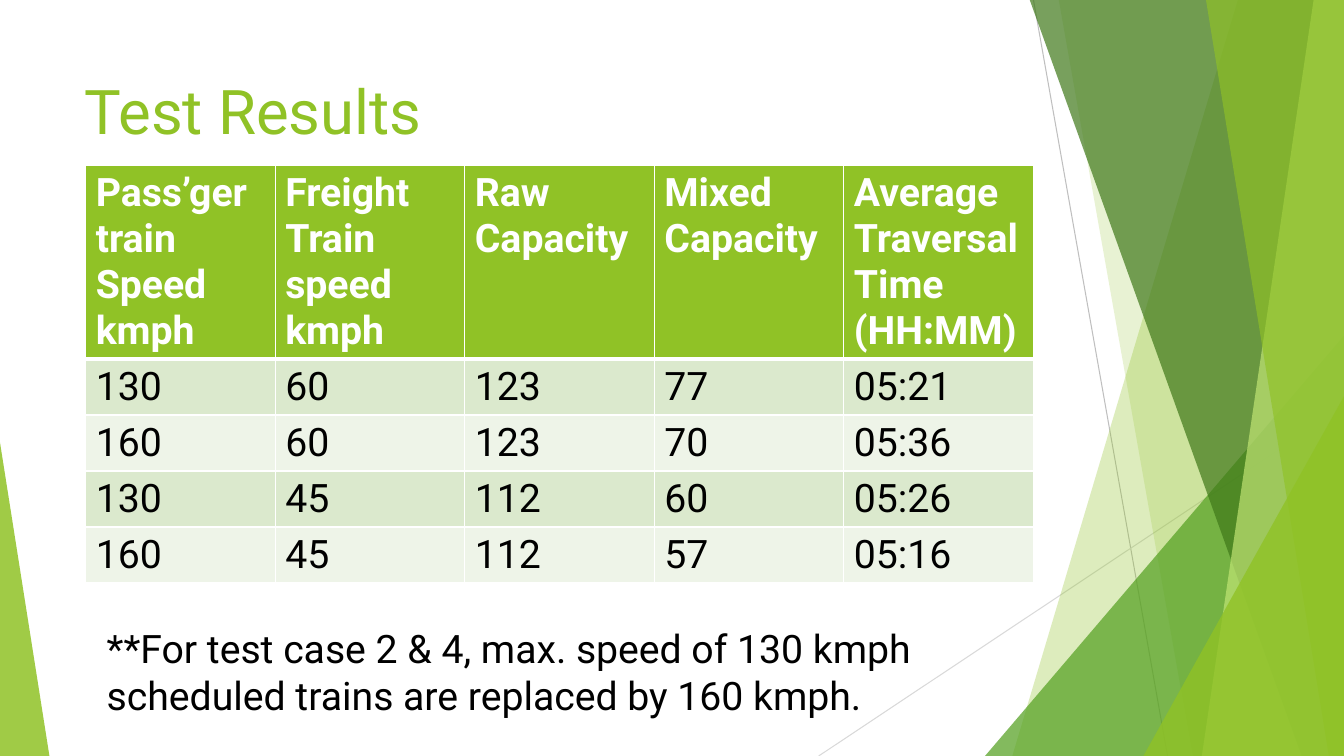
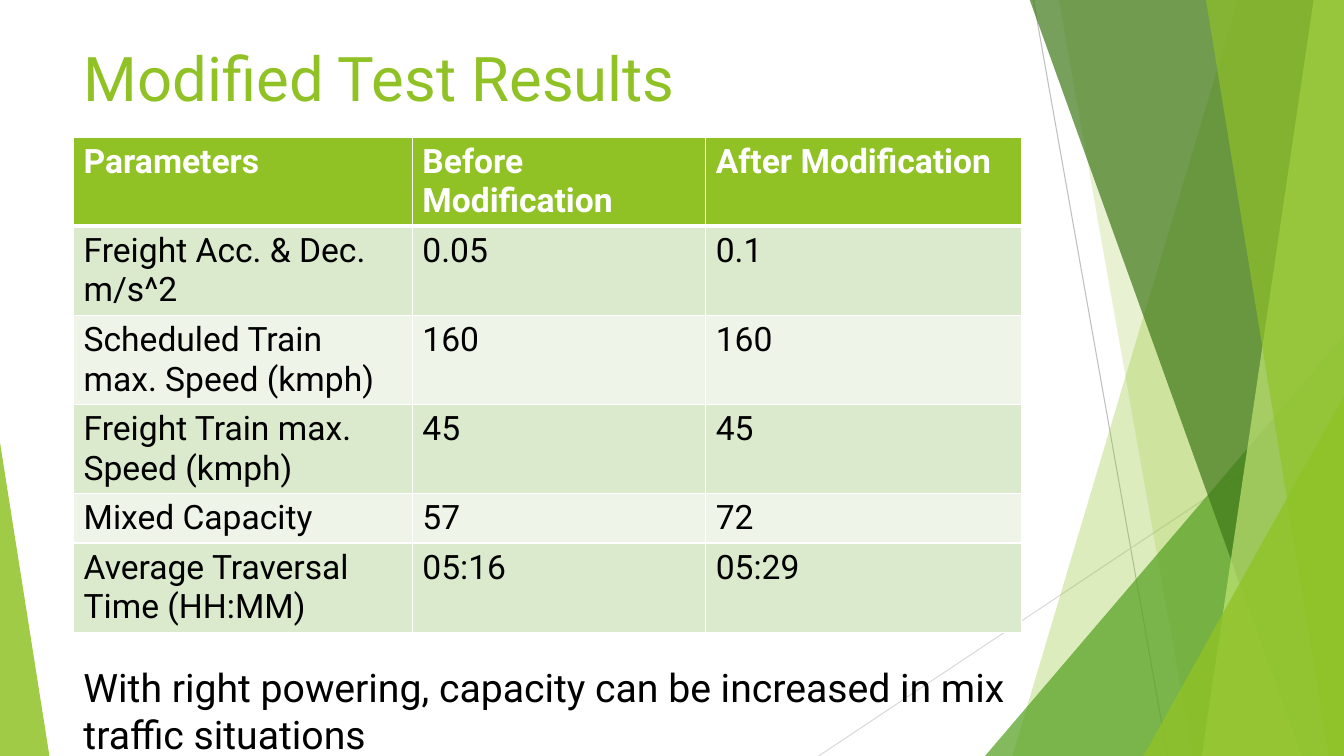
from dataclasses import dataclass

from lxml import etree
from pptx import Presentation
from pptx.dml.color import RGBColor
from pptx.enum.shapes import MSO_CONNECTOR, MSO_SHAPE
from pptx.enum.text import MSO_ANCHOR, MSO_AUTO_SIZE, PP_ALIGN
from pptx.oxml.ns import qn
from pptx.util import Inches, Pt

STRAIGHT = MSO_CONNECTOR.STRAIGHT
TRIANGLE = MSO_SHAPE.ISOSCELES_TRIANGLE
TOP = MSO_ANCHOR.TOP
LEFT = PP_ALIGN.LEFT
NO_AUTOFIT = MSO_AUTO_SIZE.NONE
GROW = MSO_AUTO_SIZE.SHAPE_TO_FIT_TEXT
TITLE_ONLY = 5
WIDTH, HEIGHT = 13.33, 7.5
BLEED = -0.01


@dataclass(frozen=True)
class Theme:
    font: str = "Roboto"
    lime: str = "90C226"
    green: str = "54A021"
    forest: str = "3F7819"
    pale_lime: str = "C0E474"
    white: str = "FFFFFF"
    black: str = "000000"
    bands: tuple = ("DBE9CD", "EEF4E8")
    dark_rule: str = "BFBFBF"
    light_rule: str = "D9D9D9"
    title_size: int = 44
    note_size: int = 28
    wide_table_size: int = 28
    tall_table_size: int = 24
    rule_width: float = 0.75
    border: int = 1
    header_border: int = 3


class Deck:
    """Hold the theme and the current slide, and add styled elements to it."""

    def __init__(self, theme):
        self.theme = theme
        self.presentation = Presentation()
        self.presentation.slide_width = Inches(WIDTH)
        self.presentation.slide_height = Inches(HEIGHT)
        self.layout = self.presentation.slide_layouts[TITLE_ONLY]
        for placeholder in list(self.layout.placeholders):
            if placeholder.placeholder_format.idx:
                self.layout.shapes.element.remove(placeholder.element)
        self.slide = None
        self.backdrop = None

    def add_slide(self, title, left, top):
        self.slide = self.presentation.slides.add_slide(self.layout)
        if self.backdrop is None:
            self.draw_backdrop()
        heading = self.slide.shapes.title
        heading.left, heading.top = Inches(left), Inches(top)
        heading.width, heading.height = Inches(9.4), Inches(1.44)
        heading.text_frame.auto_size = NO_AUTOFIT
        heading.text_frame.vertical_anchor = TOP
        self.add_text(heading.text_frame, title, self.theme.title_size, self.theme.lime)

    def add_text(self, frame, text, size, color, bold=False):
        frame.word_wrap = True
        paragraph = frame.paragraphs[0]
        paragraph.alignment = LEFT
        run = paragraph.add_run()
        run.text = text
        run.font.name = self.theme.font
        run.font.size = Pt(size)
        run.font.bold = bold
        run.font.color.rgb = RGBColor.from_string(color)

    def draw_backdrop(self):
        theme = self.theme
        self.backdrop = self.slide.shapes.add_group_shape()
        self.rule((10.25, 0), (11.58, HEIGHT), theme.dark_rule)
        self.rule((WIDTH, 4.03), (8.12, HEIGHT), theme.light_rule)
        self.ribbon(12.28, 10.04, theme.lime, 30)
        self.ribbon(10.5, 11.83, theme.lime, 20)
        self.corner(9.77, 3.33, 3.56, 1, theme.green, 72)
        self.ribbon(10.21, 12.91, theme.forest, 70)
        self.ribbon(13.03, 11.92, theme.pale_lime, 70)
        self.ribbon(11.96, 13.18, theme.lime, 65)
        self.corner(11.34, 3.93, 1.99, 1, theme.lime, 80)
        self.corner(0, 4.39, 0.49, 0, theme.lime, 85)
        self.layout.shapes.element.append(self.backdrop.element)

    def rule(self, start, end, color):
        line = self.backdrop.shapes.add_connector(
            STRAIGHT, *(Inches(value) for value in start + end))
        line.line.color.rgb = RGBColor.from_string(color)
        line.line.width = Pt(self.theme.rule_width)
        etree.SubElement(line.element.spPr, qn("a:effectLst"))

    def ribbon(self, top_left, bottom_left, color, opacity):
        outline = self.backdrop.shapes.build_freeform(Inches(top_left), Inches(BLEED))
        corners = [(WIDTH, BLEED), (WIDTH, HEIGHT), (bottom_left, HEIGHT)]
        outline.add_line_segments([(Inches(x), Inches(y)) for x, y in corners])
        self.tint(outline.convert_to_shape(), color, opacity)

    def corner(self, left, top, width, apex, color, opacity):
        wedge = self.backdrop.shapes.add_shape(
            TRIANGLE, Inches(left), Inches(top), Inches(width), Inches(HEIGHT - top))
        wedge.adjustments[0] = apex
        self.tint(wedge, color, opacity)

    def tint(self, shape, color, opacity):
        shape.shadow.inherit = False
        shape.line.fill.background()
        shape.fill.solid()
        shape.fill.fore_color.rgb = RGBColor.from_string(color)
        tone = shape.element.spPr.find(qn("a:solidFill")).find(qn("a:srgbClr"))
        etree.SubElement(tone, qn("a:alpha"), val=str(opacity * 1000))

    def add_table(self, rows, left, top, widths, heights, size):
        theme = self.theme
        table = self.slide.shapes.add_table(
            len(rows), len(widths), Inches(left), Inches(top),
            Inches(sum(widths)), Inches(sum(heights))).table
        for column, width in zip(table.columns, widths):
            column.width = Inches(width)
        for number, (row, height) in enumerate(zip(rows, heights)):
            table.rows[number].height = Inches(height)
            header = number == 0
            fill = theme.lime if header else theme.bands[(number - 1) % 2]
            color = theme.white if header else theme.black
            for cell, text in zip(table.rows[number].cells, row):
                self.add_text(cell.text_frame, text, size, color, header)
                self.add_borders(cell, number)
                cell.fill.solid()
                cell.fill.fore_color.rgb = RGBColor.from_string(fill)

    def add_borders(self, cell, number):
        thin, thick = self.theme.border, self.theme.header_border
        edges = {"L": thin, "R": thin,
                 "T": thick if number == 1 else thin,
                 "B": thick if number == 0 else thin}
        properties = cell._tc.get_or_add_tcPr()
        for edge, width in edges.items():
            line = etree.SubElement(properties, qn("a:ln" + edge), w=str(Pt(width)))
            solid = etree.SubElement(line, qn("a:solidFill"))
            etree.SubElement(solid, qn("a:srgbClr"), val=self.theme.white)

    def add_note(self, text, left, top, width):
        note = self.slide.shapes.add_textbox(
            Inches(left), Inches(top), Inches(width), Inches(1.04))
        note.text_frame.auto_size = GROW
        self.add_text(note.text_frame, text, self.theme.note_size, self.theme.black)


def main():
    theme = Theme()
    deck = Deck(theme)

    deck.add_slide("Test Results", 0.74, 0.67)
    test_results = [
        ("Pass’ger train Speed kmph", "Freight Train speed kmph", "Raw Capacity",
         "Mixed Capacity", "Average Traversal Time (HH:MM)"),
        ("130", "60", "123", "77", "05:21"),
        ("160", "60", "123", "70", "05:36"),
        ("130", "45", "112", "60", "05:26"),
        ("160", "45", "112", "57", "05:16"),
    ]
    deck.add_table(test_results, 0.85, 1.64, [1.88] * 5, [1.92] + [0.55] * 4,
                   theme.wide_table_size)
    deck.add_note("**For test case 2 & 4, max. speed of 130 kmph scheduled trains "
                  "are replaced by 160 kmph.", 0.96, 6.14, 8.39)

    deck.add_slide("Modified Test Results", 0.73, 0.35)
    modified_results = [
        ("Parameters", "Before Modification", "After Modification"),
        ("Freight Acc. & Dec. m/s^2", "0.05", "0.1"),
        ("Scheduled Train max. Speed (kmph)", "160", "160"),
        ("Freight Train max. Speed (kmph)", "45", "45"),
        ("Mixed Capacity", "57", "72"),
        ("Average Traversal Time (HH:MM)", "05:16", "05:29"),
    ]
    deck.add_table(modified_results, 0.73, 1.36, [3.36, 2.91, 3.13],
                   [0.88] * 4 + [0.49, 0.88], theme.tall_table_size)
    deck.add_note("With right powering, capacity can be increased in mix traffic "
                  "situations", 0.73, 6.53, 10.04)

    deck.presentation.save("out.pptx")


if __name__ == "__main__":
    main()
